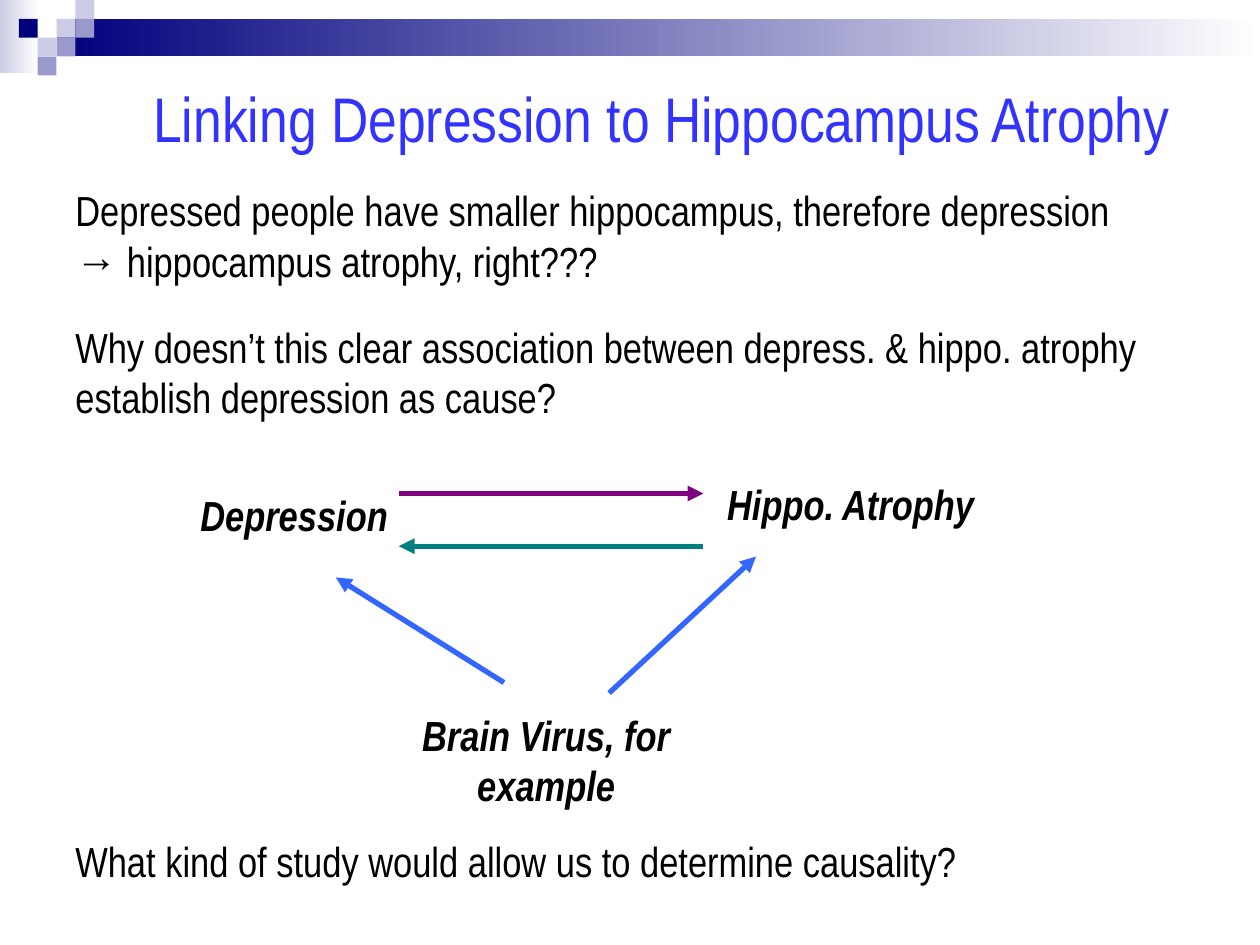
from lxml.etree import SubElement
from pptx import Presentation
from pptx.dml.color import RGBColor
from pptx.enum.shapes import MSO_CONNECTOR, MSO_SHAPE
from pptx.enum.text import MSO_ANCHOR, MSO_AUTO_SIZE, PP_ALIGN
from pptx.oxml.ns import qn
from pptx.util import Cm, Pt

NAVY = RGBColor(0x00, 0x00, 0x7D)
LILAC = RGBColor(0xCC, 0xCC, 0xE6)
LAVENDER = RGBColor(0x99, 0x99, 0xCC)
WHITE = RGBColor(0xFF, 0xFF, 0xFF)
BLACK = RGBColor(0x00, 0x00, 0x00)
TITLE_BLUE = RGBColor(0x33, 0x33, 0xFF)
PURPLE = RGBColor(0x80, 0x00, 0x80)
TEAL = RGBColor(0x00, 0x80, 0x80)
ARROW_BLUE = RGBColor(0x33, 0x66, 0xFF)
FONT = "Arial Narrow"
SQUARE = 0.38


def write_text(box, text, size=24, color=BLACK, strong=False, align=PP_ALIGN.LEFT):
    frame = box.text_frame
    frame.word_wrap = True
    frame.auto_size = MSO_AUTO_SIZE.NONE
    frame.vertical_anchor = MSO_ANCHOR.TOP
    para = frame.paragraphs[0]
    para.alignment = align
    span = para.add_run()
    span.text = text
    span.font.name = FONT
    span.font.size = Pt(size)
    span.font.color.rgb = color
    span.font.bold = strong
    span.font.italic = strong


def add_block(page, left, top, width, height, *colors):
    block = page.shapes.add_shape(
        MSO_SHAPE.RECTANGLE, Cm(left), Cm(top), Cm(width), Cm(height))
    block.shadow.inherit = False
    block.line.fill.background()
    if len(colors) == 1:
        block.fill.solid()
        block.fill.fore_color.rgb = colors[0]
    else:
        block.fill.gradient()
        block.fill.gradient_angle = 0
        for stop, color in zip(block.fill.gradient_stops, colors):
            stop.color.rgb = color


deck = Presentation()
deck.slide_width = Cm(25.4)
deck.slide_height = Cm(19.05)
page = deck.slides.add_slide(deck.slide_layouts[5])

add_block(page, 0, 0, 0.78, 1.47, LILAC, WHITE)
add_block(page, 3 * SQUARE, SQUARE, 25.4 - 3 * SQUARE, 2 * SQUARE, NAVY, WHITE)
squares = [
    (3, 1, LILAC), (4, 0, LILAC), (4, 1, LAVENDER), (2, 2, LILAC),
    (1, 1, NAVY), (3, 2, LAVENDER), (2, 3, LAVENDER),
]
for column, row, color in squares:
    add_block(page, column * SQUARE, row * SQUARE, SQUARE, SQUARE, color)

title = page.shapes.title
title.left, title.top, title.width, title.height = Cm(2.12), Cm(1.48), Cm(22.43), Cm(1.78)
write_text(title, "Linking Depression to Hippocampus Atrophy",
           size=36, color=TITLE_BLUE, align=PP_ALIGN.CENTER)

statements = [
    (3.6, 21.4, 2.29, "Depressed people have smaller hippocampus, therefore depression → hippocampus atrophy, right???"),
    (6.35, 22.23, 2.29, "Why doesn’t this clear association between depress. & hippo. atrophy establish depression as cause?"),
    (16.72, 22.65, 1.27, "What kind of study would allow us to determine causality?"),
]
for top, width, height, text in statements:
    box = page.shapes.add_textbox(Cm(1.27), Cm(top), Cm(width), Cm(height))
    write_text(box, text)

factors = [
    (2.12, 9.74, 1.27, "Depression"),
    (13.34, 9.53, 1.27, "Hippo. Atrophy"),
    (7.2, 14.18, 2.29, "Brain Virus, for example"),
]
for left, top, height, text in factors:
    box = page.shapes.add_textbox(Cm(left), Cm(top), Cm(7.62), Cm(height))
    write_text(box, text, strong=True, align=PP_ALIGN.CENTER)

arrows = [
    (8.04, 9.95, 14.18, 9.95, PURPLE),
    (14.18, 11.01, 8.04, 11.01, TEAL),
    (10.16, 13.76, 6.77, 11.64, ARROW_BLUE),
    (12.28, 13.97, 15.24, 11.22, ARROW_BLUE),
]
for start_x, start_y, end_x, end_y, color in arrows:
    arrow = page.shapes.add_connector(
        MSO_CONNECTOR.STRAIGHT, Cm(start_x), Cm(start_y), Cm(end_x), Cm(end_y))
    arrow.line.color.rgb = color
    arrow.line.width = Pt(3)
    SubElement(arrow.line._get_or_add_ln(), qn("a:tailEnd"), type="triangle")
    SubElement(arrow._element.spPr, qn("a:effectLst"))

deck.save("out.pptx")
